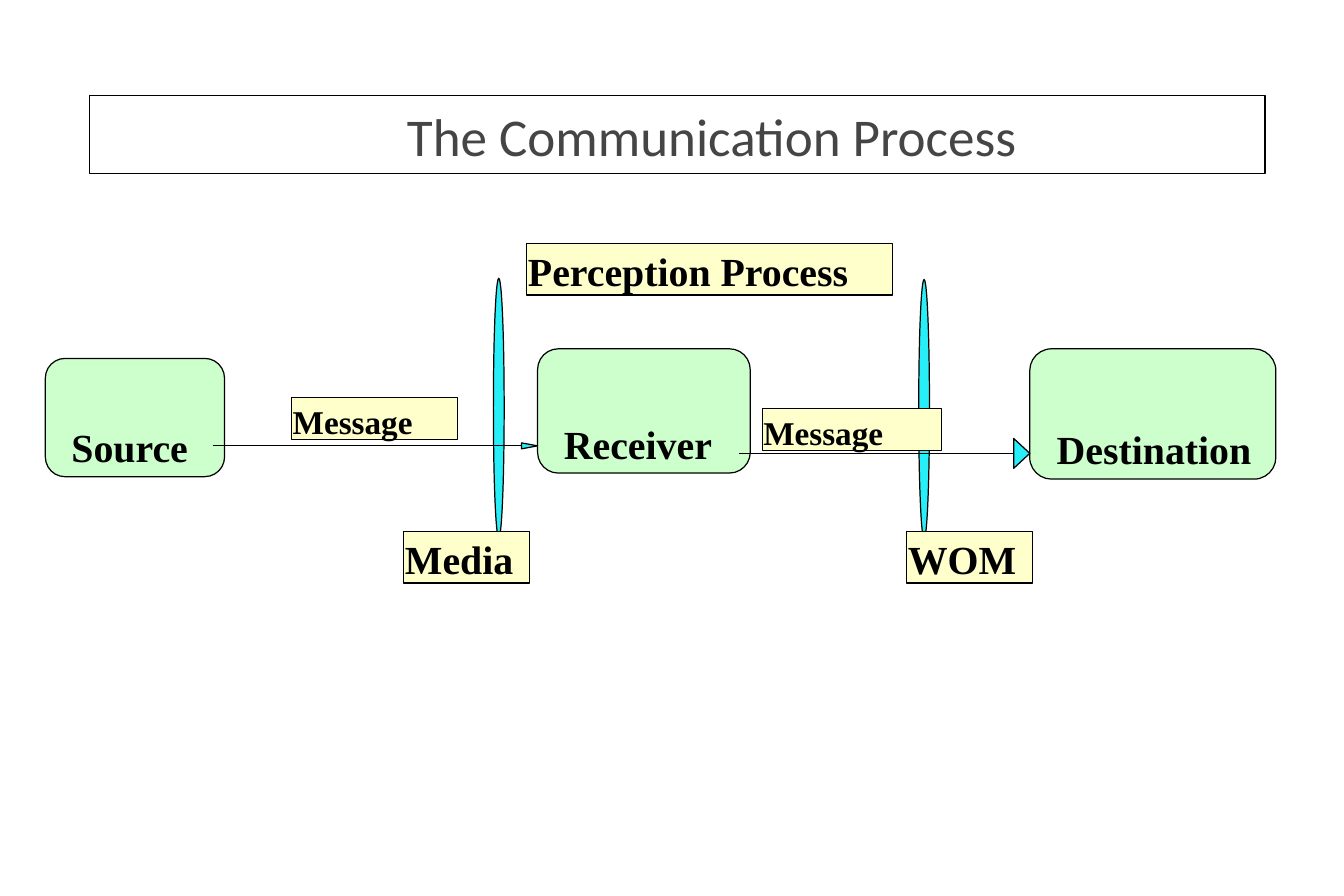
"""Build the communication process slide."""
from dataclasses import dataclass

from lxml.etree import SubElement
from pptx import Presentation
from pptx.dml.color import RGBColor
from pptx.enum.shapes import MSO_CONNECTOR, MSO_SHAPE
from pptx.enum.text import MSO_ANCHOR, PP_ALIGN
from pptx.oxml.ns import qn
from pptx.util import Pt


@dataclass(frozen=True)
class Theme:
    node: str = "CCFFCC"
    label: str = "FFFFCC"
    accent: str = "28EEF8"
    ink: str = "000000"
    heading: str = "454545"
    heading_font: str = "Calibri"
    body_font: str = "Times New Roman"
    heading_size: float = 32
    large: float = 24
    small: float = 20
    outline: float = 0.75
    arrow_line: float = 0.7


THEME = Theme()
SLIDE_SIZE = (810, 540)
TITLE = ("The Communication Process", (54, 57.6, 708.48, 46.8))
TITLE_INDENT = 41.76
NODES = [
    ("Source", (27.36, 216, 108, 71.28), PP_ALIGN.LEFT, 12.24),
    ("Receiver", (324, 210.24, 128.16, 74.88), PP_ALIGN.LEFT, 12.24),
    ("Destination", (620.64, 210.24, 148.32, 78.48), PP_ALIGN.CENTER, 1.44),
]
FILTERS = [(297.36, 167.76), (553.68, 168.48)]
FILTER_SIZE = (6.48, 156.24)
FIRST_MESSAGE = ("Message", (175.68, 239.76, 100.08, 25.2), THEME.small)
SECOND_MESSAGE = ("Message", (459.36, 246.24, 108, 25.2), THEME.small)
CHANNELS = [
    ("Media", (243.36, 320.4, 75.6, 30.96), THEME.large),
    ("WOM", (546.48, 320.4, 75.6, 30.96), THEME.large),
    ("Perception Process", (317.52, 146.88, 220.32, 30.96), THEME.large),
]
ARROWS = [(128.16, 324, 268.7, 1.8), (445.68, 620.64, 273.24, 9)]
HEAD_LENGTH = 9.72


def rgb(colour):
    return RGBColor.from_string(colour)


def paint(shape, fill):
    shape.shadow.inherit = False
    if fill:
        shape.fill.solid()
        shape.fill.fore_color.rgb = rgb(fill)
    else:
        shape.fill.background()
    shape.line.color.rgb = rgb(THEME.ink)
    shape.line.width = Pt(THEME.outline)


def add_part(slide, preset, place, fill):
    part = slide.shapes.add_shape(preset, *map(Pt, place))
    paint(part, fill)
    return part


def write(part, words, font, size, colour, bold=True, align=PP_ALIGN.LEFT,
          anchor=MSO_ANCHOR.TOP, left=0, top=0):
    frame = part.text_frame
    frame.word_wrap = True
    frame.vertical_anchor = anchor
    frame.margin_left, frame.margin_top = Pt(left), Pt(top)
    frame.margin_right = frame.margin_bottom = 0
    paragraph = frame.paragraphs[0]
    paragraph.text = words
    paragraph.alignment = align
    paragraph.font.name = font
    paragraph.font.size = Pt(size)
    paragraph.font.bold = bold
    paragraph.font.color.rgb = rgb(colour)


def add_label(slide, words, place, size):
    label = add_part(slide, MSO_SHAPE.RECTANGLE, place, THEME.label)
    write(label, words, THEME.body_font, size, THEME.ink, left=0.72, top=2)


def add_arrow(slide, start, tip, y, half_height):
    base = tip - HEAD_LENGTH
    shaft = slide.shapes.add_connector(
        MSO_CONNECTOR.STRAIGHT, Pt(start), Pt(y), Pt(base), Pt(y))
    shaft.line.color.rgb = rgb(THEME.ink)
    shaft.line.width = Pt(THEME.arrow_line)
    SubElement(shaft._element.spPr, qn("a:effectLst"))
    outline = slide.shapes.build_freeform(Pt(base), Pt(y - half_height))
    outline.add_line_segments(
        [(Pt(base), Pt(y + half_height)), (Pt(tip), Pt(y))], close=True)
    paint(outline.convert_to_shape(), THEME.accent)


def main():
    deck = Presentation()
    deck.slide_width, deck.slide_height = map(Pt, SLIDE_SIZE)
    slide = deck.slides.add_slide(deck.slide_layouts[6])

    words, place = TITLE
    title = add_part(slide, MSO_SHAPE.RECTANGLE, place, None)
    write(title, words, THEME.heading_font, THEME.heading_size, THEME.heading,
          bold=False, align=PP_ALIGN.CENTER, left=TITLE_INDENT, top=5)

    add_label(slide, *FIRST_MESSAGE)
    for words, place, align, indent in NODES:
        node = add_part(slide, MSO_SHAPE.ROUNDED_RECTANGLE, place, THEME.node)
        write(node, words, THEME.body_font, THEME.large, THEME.ink,
              align=align, anchor=MSO_ANCHOR.BOTTOM, left=indent)
    for corner in FILTERS:
        add_part(slide, MSO_SHAPE.OVAL, corner + FILTER_SIZE, THEME.accent)
    for channel in CHANNELS:
        add_label(slide, *channel)
    for arrow in ARROWS:
        add_arrow(slide, *arrow)
    add_label(slide, *SECOND_MESSAGE)

    deck.save("out.pptx")


if __name__ == "__main__":
    main()
